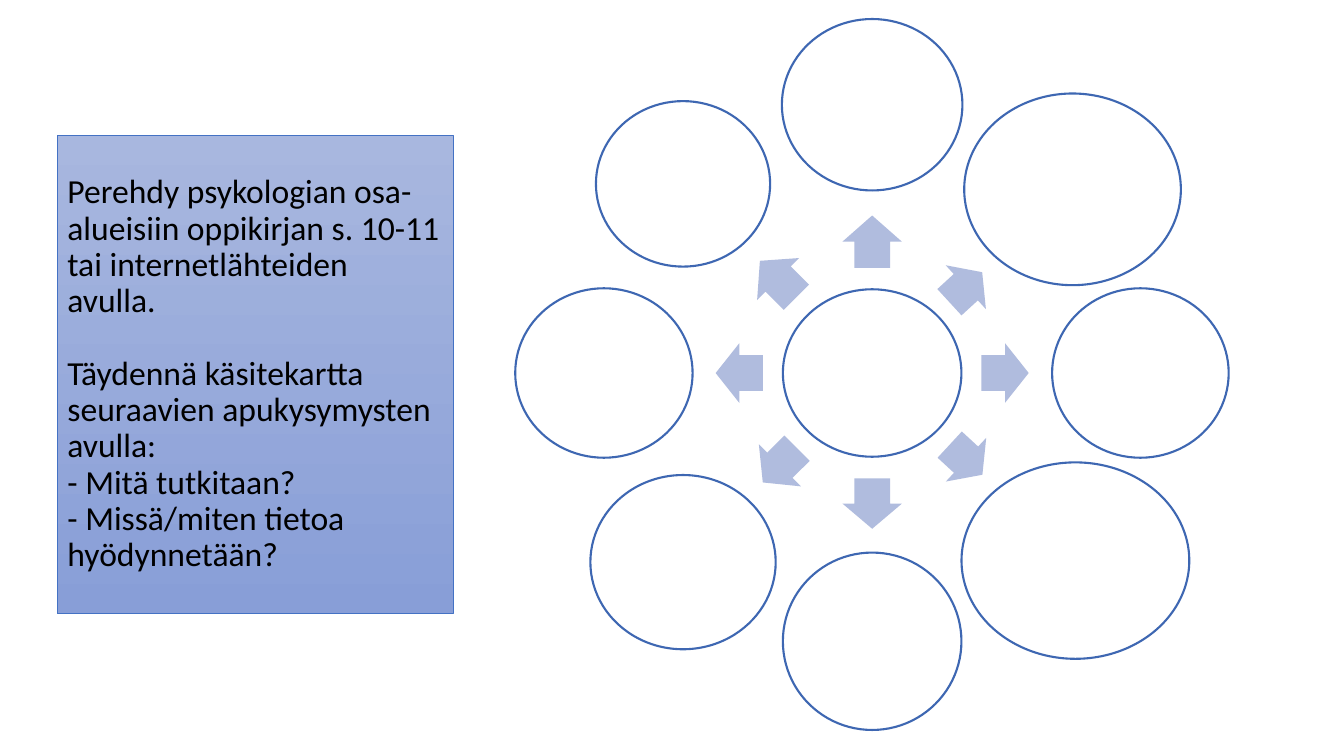
import math

import pptx
import pptx.dml.color
import pptx.enum.shapes
import pptx.enum.text
import pptx.util

Cm = pptx.util.Cm
Pt = pptx.util.Pt
KIND = pptx.enum.shapes.MSO_SHAPE

TASK = [
    "Perehdy psykologian osa-alueisiin oppikirjan s. 10-11 tai internetlähteiden avulla.",
    "Täydennä käsitekartta seuraavien apukysymysten avulla:",
    "- Mitä tutkitaan?",
    "- Missä/miten tietoa hyödynnetään?",
]
HUB = (4.5, 4.22)
# angle, circle distance, circle width, circle height, arrow distance, arrow length
SPOKES = [
    (270, 6.76, 4.55, 4.32, 3.31, 1.32),
    (317.5, 6.85, 5.46, 4.83, 3.2, 1.12),
    (0, 6.76, 4.45, 4.27, 3.35, 1.19),
    (42.7, 6.97, 5.74, 4.95, 3.22, 1.12),
    (90, 6.76, 4.5, 4.47, 3.29, 1.27),
    (135, 6.74, 4.67, 4.39, 3.29, 1.22),
    (180, 6.76, 4.47, 4.27, 3.35, 1.19),
    (225, 6.74, 4.39, 4.17, 3.35, 1.3),
]
ARROW_WIDTH = 1.5


def color(code):
    return pptx.dml.color.RGBColor.from_string(code)


def draw_task(shapes, left, top, width, height):
    box = shapes.add_shape(KIND.RECTANGLE, Cm(left), Cm(top), Cm(width), Cm(height))
    box.shadow.inherit = False
    box.fill.gradient()
    box.fill.gradient_angle = 270
    for stop, code in zip(box.fill.gradient_stops, ("A8B7DF", "889ED7")):
        stop.color.rgb = color(code)
    box.line.color.rgb = color("4472C4")
    box.line.width = Pt(0.5)
    frame = box.text_frame
    frame.word_wrap = True
    frame.vertical_anchor = pptx.enum.text.MSO_ANCHOR.MIDDLE
    frame.text = "\n".join(TASK)
    for para in frame.paragraphs:
        para.alignment = pptx.enum.text.PP_ALIGN.LEFT
        para.line_spacing = 0.9
        para.font.name = "Calibri"
        para.font.size = Pt(24)
        para.font.color.rgb = color("000000")
    frame.paragraphs[1].space_before = Pt(26)


def add_part(shapes, kind, mid, size, fill):
    """Add a filled shape centred on mid."""
    (x, y), (width, height) = mid, size
    part = shapes.add_shape(
        kind, Cm(x - width / 2), Cm(y - height / 2), Cm(width), Cm(height))
    part.shadow.inherit = False
    part.fill.solid()
    part.fill.fore_color.rgb = color(fill)
    return part


def add_circle(shapes, mid, size):
    circle = add_part(shapes, KIND.OVAL, mid, size, "FFFFFF")
    circle.line.color.rgb = color("3E67B2")
    circle.line.width = Pt(1.5)


def add_arrow(shapes, mid, length, angle):
    arrow = add_part(shapes, KIND.RIGHT_ARROW, mid, (length, ARROW_WIDTH), "B0BCDE")
    arrow.line.fill.background()
    arrow.adjustments[0] = 0.6
    arrow.adjustments[1] = 0.5
    arrow.rotation = angle


def draw_map(shapes, x, y):
    """Draw the hub at x, y with its arrows and circles around it."""
    def polar(angle, reach):
        turn = math.radians(angle)
        return x + reach * math.cos(turn), y + reach * math.sin(turn)

    group = shapes.add_group_shape().shapes
    add_circle(group, (x, y), HUB)
    for angle, reach, width, height, gap, length in SPOKES:
        add_arrow(group, polar(angle, gap), length, angle)
        add_circle(group, polar(angle, reach), (width, height))


def main():
    deck = pptx.Presentation()
    deck.slide_width = Cm(33.87)
    deck.slide_height = Cm(19.05)
    slide = deck.slides.add_slide(deck.slide_layouts[6])
    draw_task(slide.shapes, 1.45, 3.4, 9.98, 12.07)
    draw_map(slide.shapes, 21.98, 9.4)
    deck.save("out.pptx")


if __name__ == "__main__":
    main()
